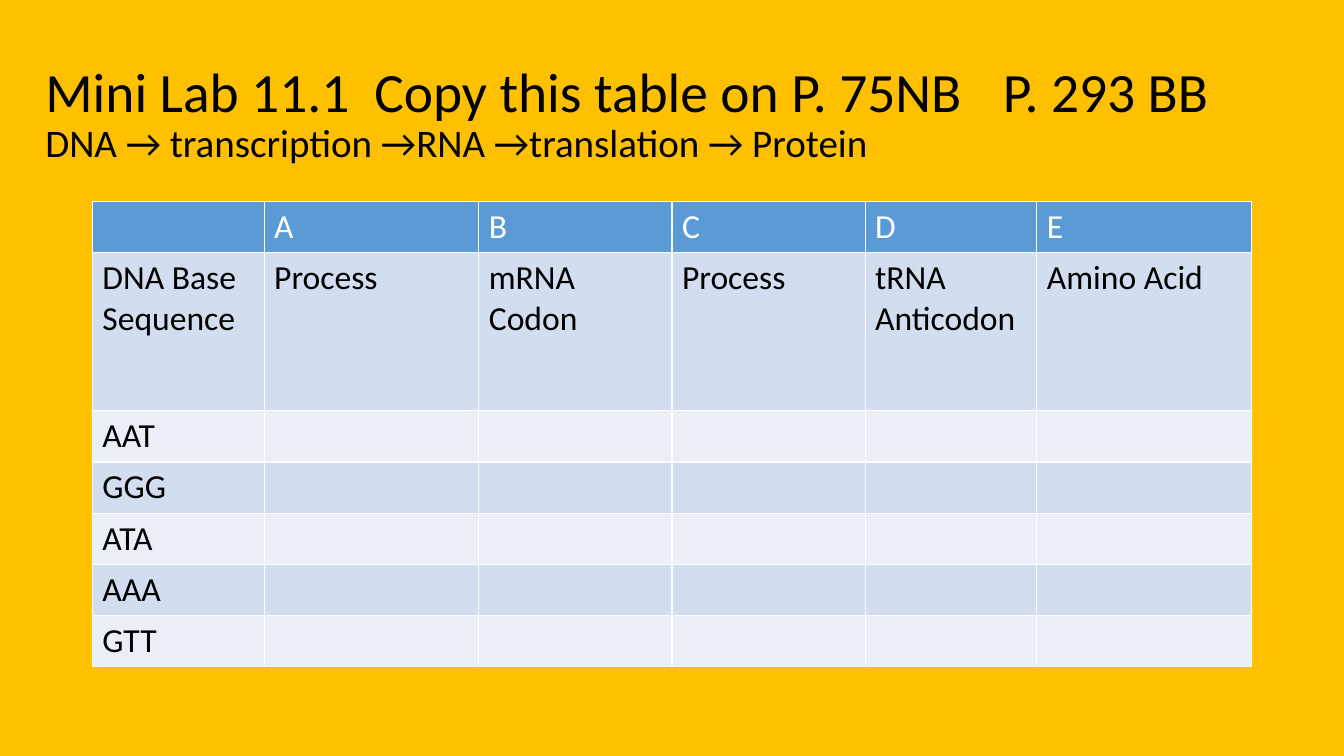
from dataclasses import dataclass

import pptx
import pptx.dml.color
import pptx.enum.text
import pptx.oxml.ns
import pptx.util
from lxml import etree

Pt = pptx.util.Pt
WHITE, BLACK, GOLD = "FFFFFF", "000000", "FFC000"
BLUE, MIST, PALE = "5B9BD5", "D2DEEF", "EAEFF7"
WIDTHS = (122.7, 153.3, 138, 138, 122.7, 153.3)


@dataclass
class Row:
    texts: tuple[str, ...]
    fill: str
    ink: str = BLACK
    height: float = 36.5


def rgb(code: str) -> pptx.dml.color.RGBColor:
    return pptx.dml.color.RGBColor.from_string(code)


def style(item, **values) -> None:
    """Set each named attribute of item."""
    for name, value in values.items():
        setattr(item, name, value)


def paint(fill, code: str) -> None:
    fill.solid()
    fill.fore_color.rgb = rgb(code)


def ink(font, size: float, code: str) -> None:
    style(font, name="Calibri", size=Pt(size), bold=False)
    font.color.rgb = rgb(code)


def border(cell, code: str, width: float) -> None:
    """Line all four sides; call before the cell is filled."""
    props = cell._tc.get_or_add_tcPr()
    qn = pptx.oxml.ns.qn
    for side in "LRTB":
        line = etree.SubElement(props, qn(f"a:ln{side}"), w=str(Pt(width)))
        solid = etree.SubElement(line, qn("a:solidFill"))
        etree.SubElement(solid, qn("a:srgbClr"), val=code)


def add_title(slide) -> None:
    title = slide.shapes.title
    style(title, left=Pt(25.2), top=Pt(37.4), width=Pt(892), height=Pt(90))
    frame = title.text_frame
    style(frame, word_wrap=True,
          auto_size=pptx.enum.text.MSO_AUTO_SIZE.NONE,
          vertical_anchor=pptx.enum.text.MSO_ANCHOR.MIDDLE)
    para = frame.paragraphs[0]
    style(para, alignment=pptx.enum.text.PP_ALIGN.LEFT, line_spacing=0.9)

    head = para.add_run()
    head.text = "Mini Lab 11.1  Copy this table on P. 75NB\tP. 293 BB"
    ink(head.font, 39.6, BLACK)
    para.add_line_break()
    # The break carries its own size, which sets the first line's height.
    etree.SubElement(para._p[-1], pptx.oxml.ns.qn("a:rPr"), sz="3960")
    flow = para.add_run()
    flow.text = "DNA → transcription →RNA →translation → Protein"
    ink(flow.font, 27.9, BLACK)


def add_grid(slide, rows: list[Row]) -> None:
    frame = slide.shapes.add_table(
        len(rows), len(WIDTHS), Pt(66), Pt(144),
        Pt(sum(WIDTHS)), Pt(sum(row.height for row in rows)))
    table = frame.table
    style(table, first_row=True, horz_banding=True)
    for column, width in zip(table.columns, WIDTHS):
        column.width = Pt(width)
    for line, row in zip(table.rows, rows):
        line.height = Pt(row.height)
        for cell in line.cells:
            border(cell, WHITE, 1)
            paint(cell.fill, row.fill)
        for cell, text in zip(line.cells, row.texts):
            if text:
                run = cell.text_frame.paragraphs[0].add_run()
                run.text = text
                ink(run.font, 24, row.ink)


def main() -> None:
    deck = pptx.Presentation()
    style(deck, slide_width=Pt(960), slide_height=Pt(540))
    slide = deck.slides.add_slide(deck.slide_layouts[5])
    paint(slide.background.fill, GOLD)
    add_title(slide)

    rows = [
        Row(("", *"ABCDE"), BLUE, WHITE),
        Row(("DNA Base Sequence", "Process", "mRNA Codon", "Process",
             "tRNA Anticodon", "Amino Acid"), MIST, height=113),
    ]
    for i, bases in enumerate(("AAT", "GGG", "ATA", "AAA", "GTT")):
        rows.append(Row((bases,), MIST if i % 2 else PALE))
    add_grid(slide, rows)
    deck.save("out.pptx")


if __name__ == "__main__":
    main()
